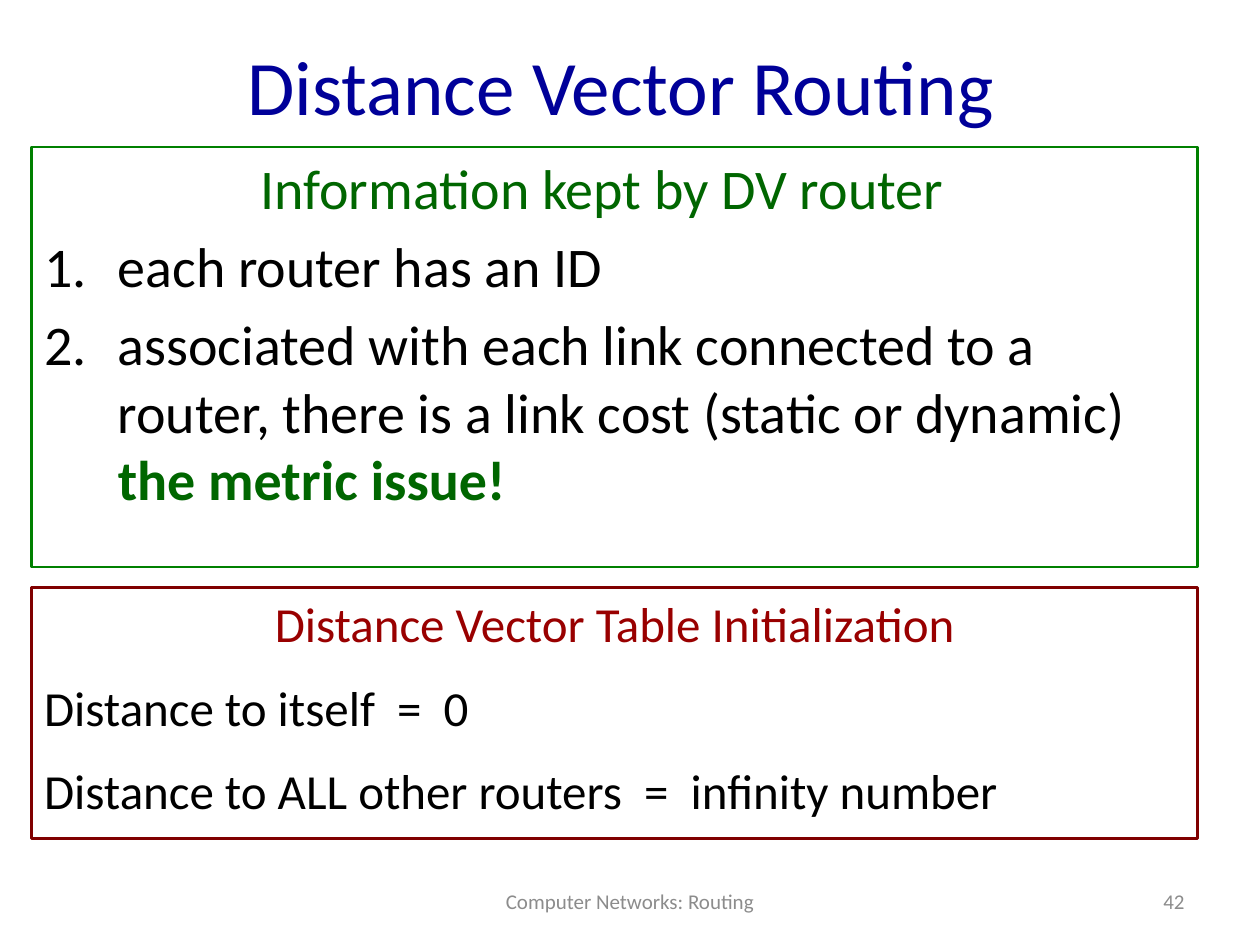
from lxml.etree import SubElement
from pptx import Presentation
from pptx.dml.color import RGBColor
from pptx.enum.shapes import MSO_SHAPE as Shape
from pptx.enum.text import MSO_ANCHOR as Anchor, MSO_AUTO_SIZE as AutoSize, PP_ALIGN as Align
from pptx.oxml.ns import qn
from pptx.util import Cm, Pt

NAVY = RGBColor(0x00, 0x00, 0x99)
GREEN = RGBColor(0x00, 0x66, 0x00)
GREEN_BORDER = RGBColor(0x00, 0x80, 0x00)
RED = RGBColor(0x99, 0x00, 0x00)
RED_BORDER = RGBColor(0x80, 0x00, 0x00)
BLACK = RGBColor(0x00, 0x00, 0x00)
GRAY = RGBColor(0x8C, 0x8C, 0x8C)

BOX_LEFT, BOX_WIDTH = 0.64, 23.5
FOOTER_TOP, FOOTER_HEIGHT = 17.66, 1.01


def add_text(paragraph, text, size, color, font="Calibri", bold=False, align=Align.LEFT, before=0):
    paragraph.alignment = align
    paragraph.space_before = Pt(before)
    run = paragraph.add_run()
    run.text = text
    run.font.name = font
    run.font.size = Pt(size)
    run.font.bold = bold
    run.font.color.rgb = color


class SlideBuilder:
    border_width = Pt(1.5)
    hanging = Cm(1.48)

    def __init__(self, slide):
        self.slide = slide

    def place(self, shape, left, top, width, height, anchor=Anchor.TOP):
        shape.left, shape.top = Cm(left), Cm(top)
        shape.width, shape.height = Cm(width), Cm(height)
        frame = shape.text_frame
        frame.word_wrap = True
        frame.auto_size = AutoSize.NONE
        frame.vertical_anchor = anchor
        return frame

    def outline(self, shape, color):
        shape.fill.background()
        shape.line.color.rgb = color
        shape.line.width = self.border_width

    def set_list_style(self, paragraph, numbered):
        properties = paragraph._p.get_or_add_pPr()
        properties.set("marL", str(self.hanging))
        properties.set("indent", str(-self.hanging))
        if numbered:
            SubElement(properties, qn("a:buFont"), typeface="+mj-lt")
            SubElement(properties, qn("a:buAutoNum"), type="arabicPeriod")
        else:
            SubElement(properties, qn("a:buNone"))

    def title(self, text):
        frame = self.place(self.slide.shapes.title, 1.9, 0.64, 21.59, 2.12, Anchor.MIDDLE)
        add_text(frame.paragraphs[0], text, 44, NAVY, align=Align.CENTER)

    def numbered_box(self, heading, items, top, height):
        shape = self.slide.placeholders[1]
        self.outline(shape, GREEN_BORDER)
        frame = self.place(shape, BOX_LEFT, top, BOX_WIDTH, height)
        paragraph = frame.paragraphs[0]
        add_text(paragraph, heading, 32, GREEN, align=Align.CENTER, before=6.4)
        self.set_list_style(paragraph, numbered=False)
        for text, emphasis in items:
            paragraph = frame.add_paragraph()
            add_text(paragraph, text, 32, BLACK, before=6.4)
            if emphasis:
                add_text(paragraph, emphasis, 32, GREEN, bold=True, before=6.4)
            self.set_list_style(paragraph, numbered=True)

    def plain_box(self, heading, lines, top, height):
        shape = self.slide.shapes.add_shape(Shape.RECTANGLE, 0, 0, 0, 0)
        shape.shadow.inherit = False
        self.outline(shape, RED_BORDER)
        frame = self.place(shape, BOX_LEFT, top, BOX_WIDTH, height)
        add_text(frame.paragraphs[0], heading, 28, RED, align=Align.CENTER, before=14)
        for line in lines:
            add_text(frame.add_paragraph(), line, 28, BLACK, before=14)

    def footer(self, text, left, width, align):
        shape = self.slide.shapes.add_textbox(0, 0, 0, 0)
        frame = self.place(shape, left, FOOTER_TOP, width, FOOTER_HEIGHT, Anchor.MIDDLE)
        add_text(frame.paragraphs[0], text, 12, GRAY, align=align)


def main():
    presentation = Presentation()
    presentation.slide_width, presentation.slide_height = Cm(25.4), Cm(19.05)
    builder = SlideBuilder(presentation.slides.add_slide(presentation.slide_layouts[1]))
    builder.footer("Computer Networks: Routing", 8.68, 8.04, Align.CENTER)
    builder.footer("42", 18.2, 5.93, Align.RIGHT)
    builder.title("Distance Vector Routing ")
    builder.numbered_box(
        "Information kept by DV router  ",
        [
            ("each router has an ID", ""),
            ("associated with each link connected to a router, "
             "there is a link cost (static or dynamic) ", "the metric issue!"),
        ],
        top=2.96, height=8.47,
    )
    builder.plain_box(
        "Distance Vector Table Initialization",
        ["Distance to itself  =  0", "Distance to ALL other routers  =  infinity number"],
        top=11.85, height=5.06,
    )
    presentation.save("out.pptx")


if __name__ == "__main__":
    main()
